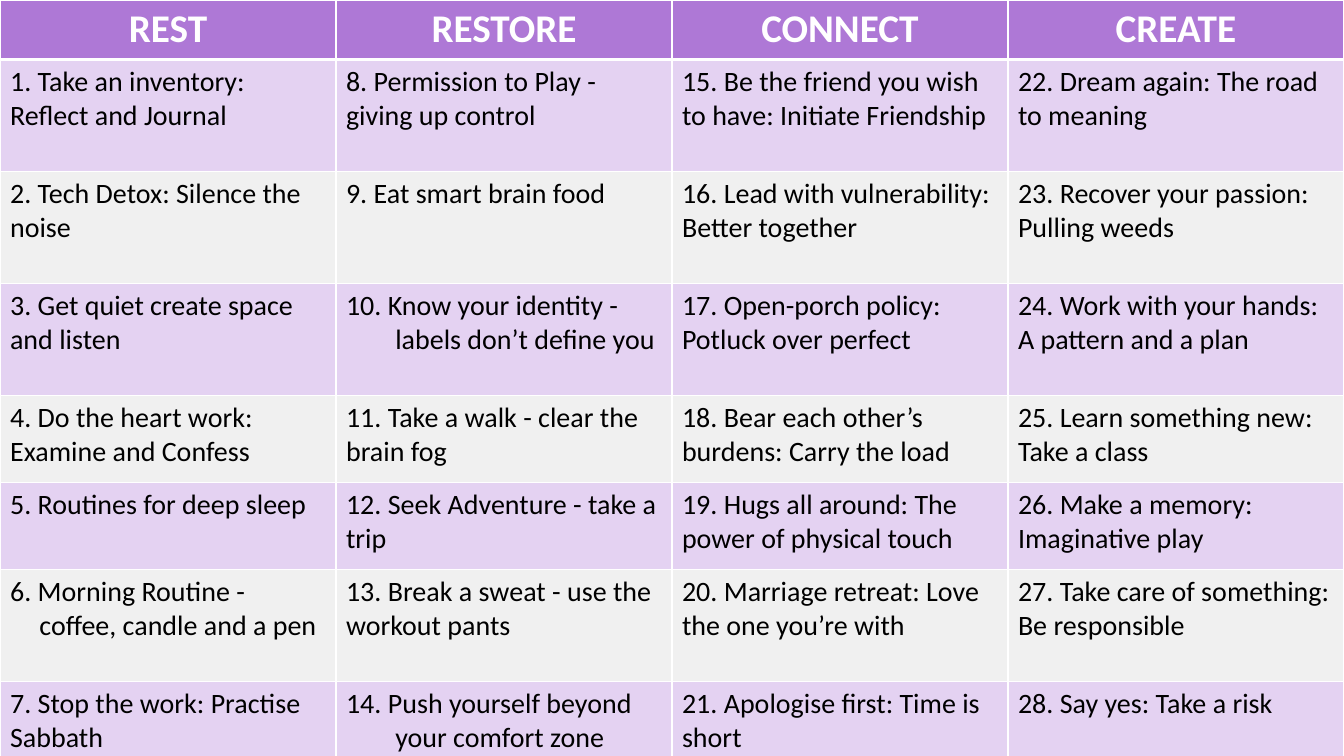
import pptx
import pptx.dml.color
import pptx.enum.text
import pptx.oxml.ns
import pptx.util
from lxml import etree

Cm, Pt = pptx.util.Cm, pptx.util.Pt
RGBColor = pptx.dml.color.RGBColor

# Content: each heading with its seven daily practices, numbered in running order
PRACTICES = {
    "REST": [
        "Take an inventory: Reflect and Journal",
        "Tech Detox: Silence the noise",
        "Get quiet create space and listen",
        "Do the heart work: Examine and Confess",
        "Routines for deep sleep",
        "Morning Routine - coffee, candle and a pen",
        "Stop the work: Practise Sabbath",
    ],
    "RESTORE": [
        "Permission to Play - giving up control",
        "Eat smart brain food",
        "Know your identity - labels don’t define you",
        "Take a walk - clear the brain fog",
        "Seek Adventure - take a trip",
        "Break a sweat - use the workout pants",
        "Push yourself beyond your comfort zone",
    ],
    "CONNECT": [
        "Be the friend you wish to have: Initiate Friendship",
        "Lead with vulnerability: Better together",
        "Open-porch policy: Potluck over perfect",
        "Bear each other’s burdens: Carry the load",
        "Hugs all around: The power of physical touch",
        "Marriage retreat: Love the one you’re with",
        "Apologise first: Time is short",
    ],
    "CREATE": [
        "Dream again: The road to meaning",
        "Recover your passion: Pulling weeds",
        "Work with your hands: A pattern and a plan",
        "Learn something new: Take a class",
        "Make a memory: Imaginative play",
        "Take care of something: Be responsible",
        "Say yes: Take a risk",
    ],
}
HANGING_INDENTS = {6: Cm(0.74), 10: Cm(1.24), 14: Cm(1.24)}
ROW_HEIGHTS = [Cm(height) for height in (1.5, 2.82, 2.82, 2.82, 2.2, 2.2, 2.82, 1.97)]

FONT = "Calibri"
BLACK = RGBColor(0x00, 0x00, 0x00)
WHITE = RGBColor(0xFF, 0xFF, 0xFF)
PURPLE = RGBColor(0xAE, 0x78, 0xD6)
LILAC = RGBColor(0xE4, 0xD2, 0xF2)
PALE_GREY = RGBColor(0xF0, 0xF0, 0xF0)


def write_cell(cell, text, *, size, color, fill, bold=False, centred=False,
               hanging=0, top=1, bottom=1):
    para = cell.text_frame.paragraphs[0]
    if centred:
        para.alignment = pptx.enum.text.PP_ALIGN.CENTER
    span = para.add_run()
    span.text = text
    span.font.name = FONT
    span.font.size = Pt(size)
    span.font.bold = bold
    span.font.color.rgb = color
    if hanging:
        properties = para._p.get_or_add_pPr()
        properties.set("marL", str(hanging))
        properties.set("indent", str(-hanging))

    # Borders come before the fill in the cell's properties
    properties = cell._tc.get_or_add_tcPr()
    for side, width in (("L", 1), ("R", 1), ("T", top), ("B", bottom)):
        line = etree.SubElement(properties, pptx.oxml.ns.qn(f"a:ln{side}"), w=str(Pt(width)))
        paint = etree.SubElement(line, pptx.oxml.ns.qn("a:solidFill"))
        etree.SubElement(paint, pptx.oxml.ns.qn("a:srgbClr"), val=str(WHITE))
    cell.fill.solid()
    cell.fill.fore_color.rgb = fill


def main():
    deck = pptx.Presentation()
    deck.slide_width, deck.slide_height = Cm(33.87), Cm(19.05)
    page = deck.slides.add_slide(deck.slide_layouts[6])
    page.background.fill.solid()
    page.background.fill.fore_color.rgb = BLACK

    # Full-page table
    table = page.shapes.add_table(len(ROW_HEIGHTS), len(PRACTICES), 0, 0,
                                  deck.slide_width, sum(ROW_HEIGHTS)).table
    for row, height in zip(table.rows, ROW_HEIGHTS):
        row.height = height

    # Headings and numbered practices, column by column
    number = 0
    for column, (heading, practices) in enumerate(PRACTICES.items()):
        write_cell(table.cell(0, column), heading, size=28, color=WHITE, fill=PURPLE,
                   bold=True, centred=True, bottom=3)
        for row, practice in enumerate(practices, start=1):
            number += 1
            write_cell(table.cell(row, column), f"{number}. {practice}", size=20,
                       color=BLACK, fill=LILAC if row % 2 else PALE_GREY,
                       hanging=HANGING_INDENTS.get(number, 0), top=3 if row == 1 else 1)

    deck.save("out.pptx")


if __name__ == "__main__":
    main()
